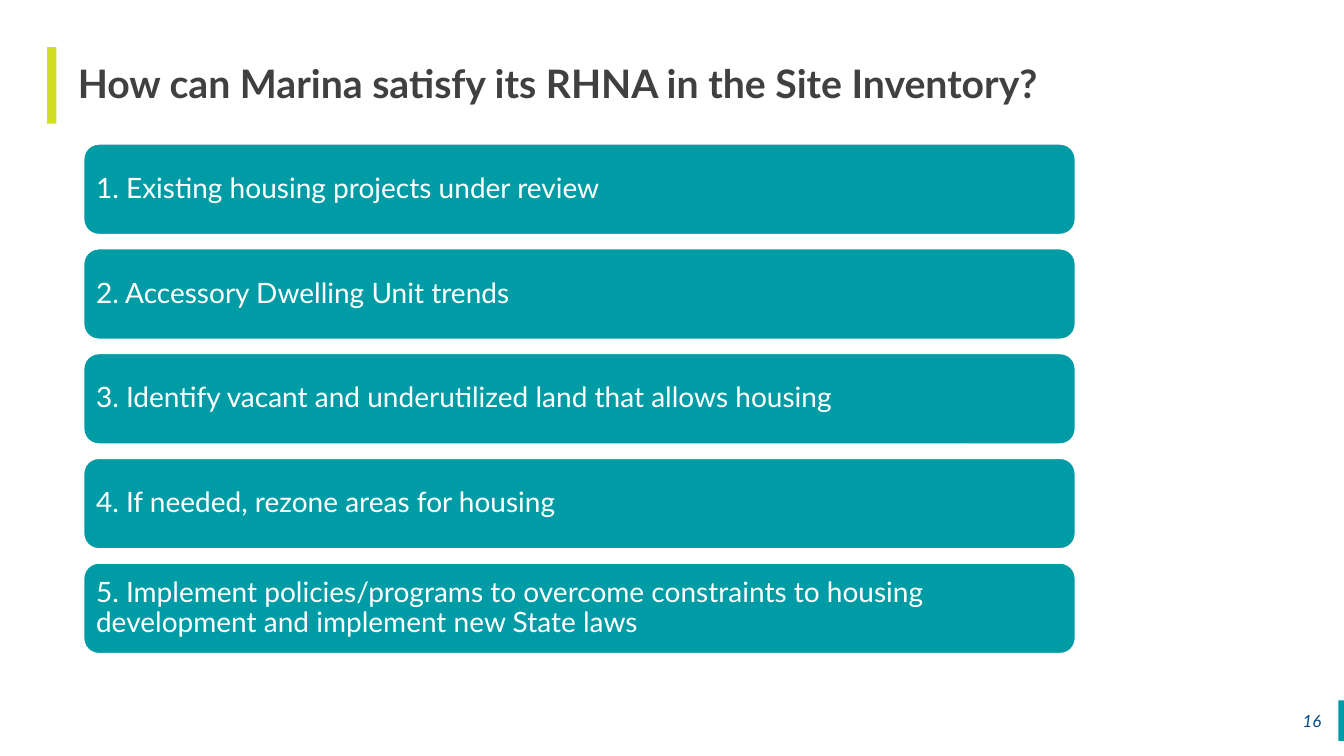
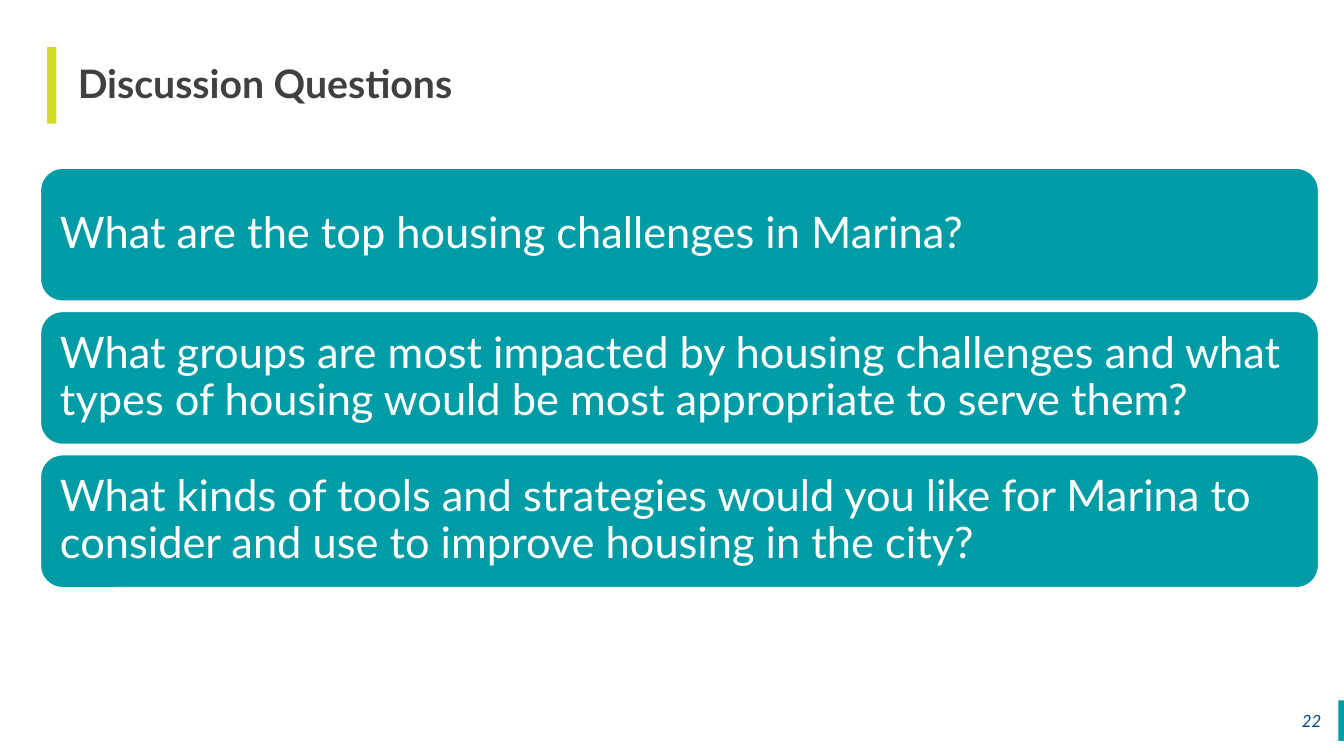
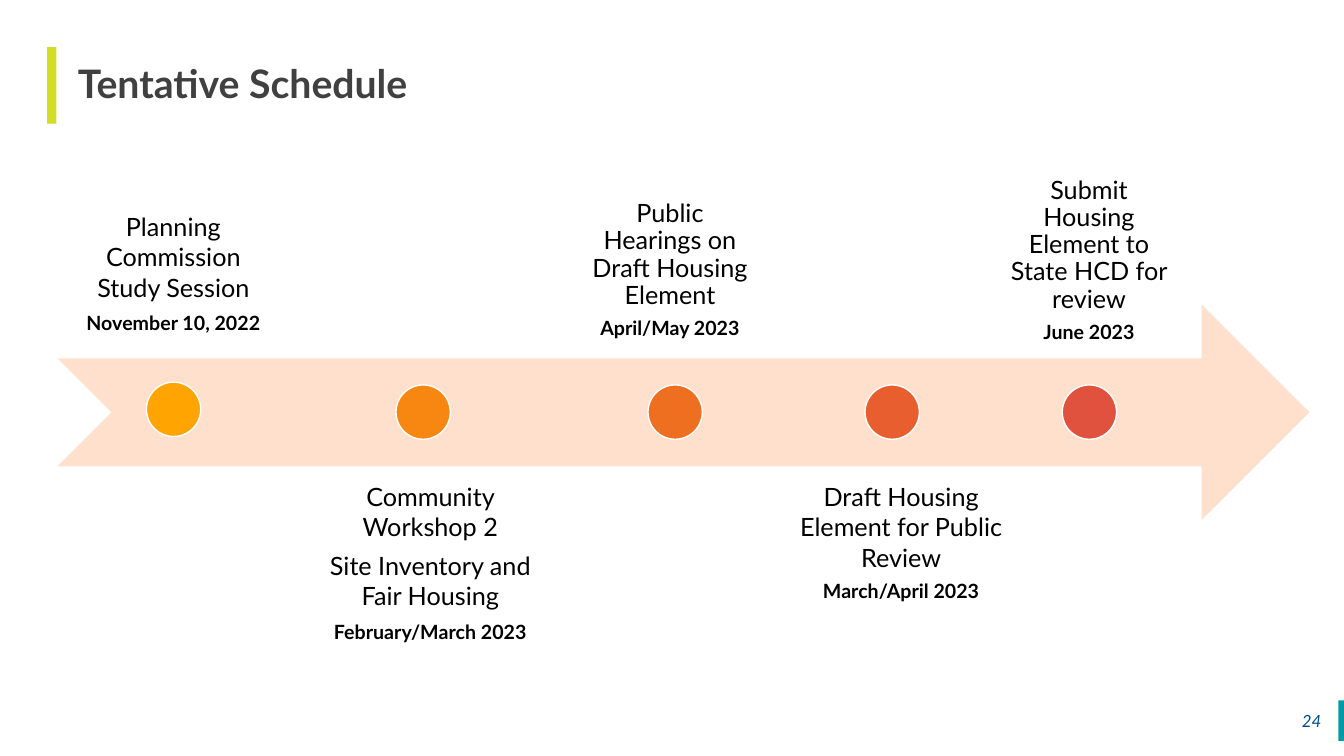
from dataclasses import dataclass

from pptx import Presentation
from pptx.dml.color import RGBColor
from pptx.enum.shapes import MSO_SHAPE as SHAPE
from pptx.enum.text import MSO_ANCHOR as ANCHOR, MSO_AUTO_SIZE as AUTO_SIZE, PP_ALIGN as ALIGN
from pptx.util import Cm, Pt

FONT = "Lato"
WHITE = RGBColor(0xFF, 0xFF, 0xFF)
BLACK = RGBColor(0x00, 0x00, 0x00)
CHARCOAL = RGBColor(0x40, 0x40, 0x40)
TEAL = RGBColor(0x00, 0x9C, 0xA6)
LIME = RGBColor(0xD2, 0xDE, 0x26)
NAVY = RGBColor(0x00, 0x4B, 0x87)
PEACH = RGBColor(0xFF, 0xE0, 0xCC)
DOT_COLOURS = [
    RGBColor(0xFF, 0xA4, 0x00),
    RGBColor(0xF7, 0x87, 0x10),
    RGBColor(0xEF, 0x6F, 0x20),
    RGBColor(0xE8, 0x5E, 0x2F),
    RGBColor(0xE1, 0x52, 0x3E),
]
DOT_SIZE = 1.37


@dataclass
class Box:
    """A region of the slide, in centimetres."""
    left: float
    top: float
    width: float
    height: float

    def inner(self, left, top, width, height):
        return Box(self.left + left, self.top + top, width, height)

    def lengths(self):
        return [Cm(v) for v in (self.left, self.top, self.width, self.height)]


@dataclass
class Milestone:
    """Label box and dot corner are relative to the timeline arrow."""
    steps: list
    date: str
    label: tuple
    dot: tuple
    anchor: ANCHOR = ANCHOR.BOTTOM
    line_spacing: float = 1.0
    gap: float = 6.3


TITLE_BOX = Box(1.45, 1.19, 31.27, 1.93)
ACCENT_BOX = Box(1.19, 1.19, 0.23, 1.93)
CORNER_BOX = Box(33.73, 17.65, 0.14, 1.02)
NUMBER_BOX = Box(32.51, 17.65, 1.04, 1.02)

INVENTORY_STEPS = [
    "1. Existing housing projects under review",
    "2. Accessory Dwelling Unit trends",
    "3. Identify vacant and underutilized land that allows housing",
    "4. If needed, rezone areas for housing",
    "5. Implement policies/programs to overcome constraints to housing "
    "development and implement new State laws",
]
QUESTIONS = [
    "What are the top housing challenges in Marina?",
    "What groups are most impacted by housing challenges and what types of "
    "housing would be most appropriate to serve them?",
    "What kinds of tools and strategies would you like for Marina to consider "
    "and use to improve housing in the city?",
]
MILESTONES = [
    Milestone(["Planning Commission Study Session"], "November 10, 2022",
              (0, -3.99, 5.84, 5.11), (2.24, 1.96)),
    Milestone(["Community Workshop 2", "Site Inventory and Fair Housing"],
              "February/March 2023", (6.27, 4.09, 6.25, 5.44), (8.53, 2.03),
              anchor=ANCHOR.TOP),
    Milestone(["Public Hearings on Draft Housing Element"], "April/May 2023",
              (13.06, -2.97, 4.75, 5.44), (14.88, 2.03),
              anchor=ANCHOR.TOP, line_spacing=0.9),
    Milestone(["Draft Housing Element for Public Review"], "March/April 2023",
              (18.34, 2.44, 5.84, 5.44), (20.35, 2.03), gap=5),
    Milestone(["Submit Housing Element to State HCD for review"], "June 2023",
              (23.62, -4.09, 4.75, 5.44), (25.32, 2.03), line_spacing=0.9),
]


# Shared building blocks
def add_filled(slide, kind, box, fill, outline=None):
    shape = slide.shapes.add_shape(kind, *box.lengths())
    shape.shadow.inherit = False
    shape.fill.solid()
    shape.fill.fore_color.rgb = fill
    if outline is None:
        shape.line.fill.background()
    else:
        shape.line.color.rgb = outline
        shape.line.width = Pt(1)
    return shape


def set_frame(frame, anchor, *margins):
    frame.word_wrap = True
    frame.auto_size = AUTO_SIZE.NONE
    frame.vertical_anchor = anchor
    (frame.margin_left, frame.margin_top,
     frame.margin_right, frame.margin_bottom) = [Cm(m) for m in margins]


def write(paragraph, text, size, colour, align=ALIGN.LEFT, spacing=1.0,
          bold=False, italic=False):
    paragraph.text = text
    paragraph.alignment = align
    paragraph.line_spacing = spacing
    font = paragraph.font
    font.name, font.size, font.bold, font.italic = FONT, Pt(size), bold, italic
    font.color.rgb = colour


def prepare_layout(deck):
    """Give the title-only layout its title place and drop its footers."""
    layout = deck.slide_layouts[5]
    for holder in list(layout.placeholders):
        if holder.placeholder_format.idx:
            holder.element.getparent().remove(holder.element)
        else:
            holder.left, holder.top, holder.width, holder.height = TITLE_BOX.lengths()
    return layout


def move_bars_to_layout(slide, layout):
    for box, colour in ((CORNER_BOX, TEAL), (ACCENT_BOX, LIME)):
        bar = add_filled(slide, SHAPE.RECTANGLE, box, colour)
        layout.element.cSld.spTree.append(bar.element)


def add_page(deck, layout, title, number):
    slide = deck.slides.add_slide(layout)
    heading = slide.shapes.title.text_frame
    set_frame(heading, ANCHOR.MIDDLE, 0.51, 0, 0, 0)
    write(heading.paragraphs[0], title, 28, CHARCOAL, spacing=0.9, bold=True)

    page_number = slide.shapes.add_textbox(*NUMBER_BOX.lengths()).text_frame
    set_frame(page_number, ANCHOR.MIDDLE, 0, 0.13, 0.25, 0.13)
    write(page_number.paragraphs[0], str(number), 12, NAVY, ALIGN.RIGHT, italic=True)
    return slide


# Stack of rounded cards, evenly spread over the box
def add_cards(slide, box, texts, gap, size, inset):
    height = (box.height - gap * (len(texts) - 1)) / len(texts)
    for row, text in enumerate(texts):
        place = box.inner(0, row * (height + gap), box.width, height)
        card = add_filled(slide, SHAPE.ROUNDED_RECTANGLE, place, TEAL, WHITE)
        set_frame(card.text_frame, ANCHOR.MIDDLE, *[inset] * 4)
        write(card.text_frame.paragraphs[0], text, size, WHITE, spacing=0.9)


# Arrow with dots and dated labels
def add_timeline(slide, box, milestones):
    add_filled(slide, SHAPE.NOTCHED_RIGHT_ARROW, box, PEACH)
    for milestone, colour in zip(milestones, DOT_COLOURS):
        add_filled(slide, SHAPE.OVAL, box.inner(*milestone.dot, DOT_SIZE, DOT_SIZE),
                   colour, WHITE)
        add_label(slide, box.inner(*milestone.label), milestone)


def add_label(slide, box, milestone):
    label = slide.shapes.add_textbox(*box.lengths()).text_frame
    set_frame(label, milestone.anchor, *[0.36] * 4)
    paragraph = label.paragraphs[0]
    for step in milestone.steps:
        write(paragraph, step, 18, BLACK, ALIGN.CENTER, milestone.line_spacing)
        paragraph.space_after = Pt(milestone.gap)
        paragraph = label.add_paragraph()
    write(paragraph, milestone.date, 14, BLACK, ALIGN.CENTER,
          milestone.line_spacing, bold=True)


def main():
    deck = Presentation()
    deck.slide_width, deck.slide_height = Cm(33.87), Cm(19.05)
    layout = prepare_layout(deck)

    inventory = add_page(deck, layout,
                         "How can Marina satisfy its RHNA in the Site Inventory?", 16)
    move_bars_to_layout(inventory, layout)
    add_cards(inventory, Box(2.11, 3.63, 24.99, 12.84), INVENTORY_STEPS,
              gap=0.36, size=20, inset=0.2)

    discussion = add_page(deck, layout, "Discussion Questions", 22)
    add_cards(discussion, Box(1.02, 4.24, 32.21, 10.57), QUESTIONS,
              gap=0.26, size=31, inset=0.33)

    schedule = add_page(deck, layout, "Tentative Schedule", 24)
    add_timeline(schedule, Box(1.45, 7.67, 31.55, 5.44), MILESTONES)

    deck.save("out.pptx")


if __name__ == "__main__":
    main()
